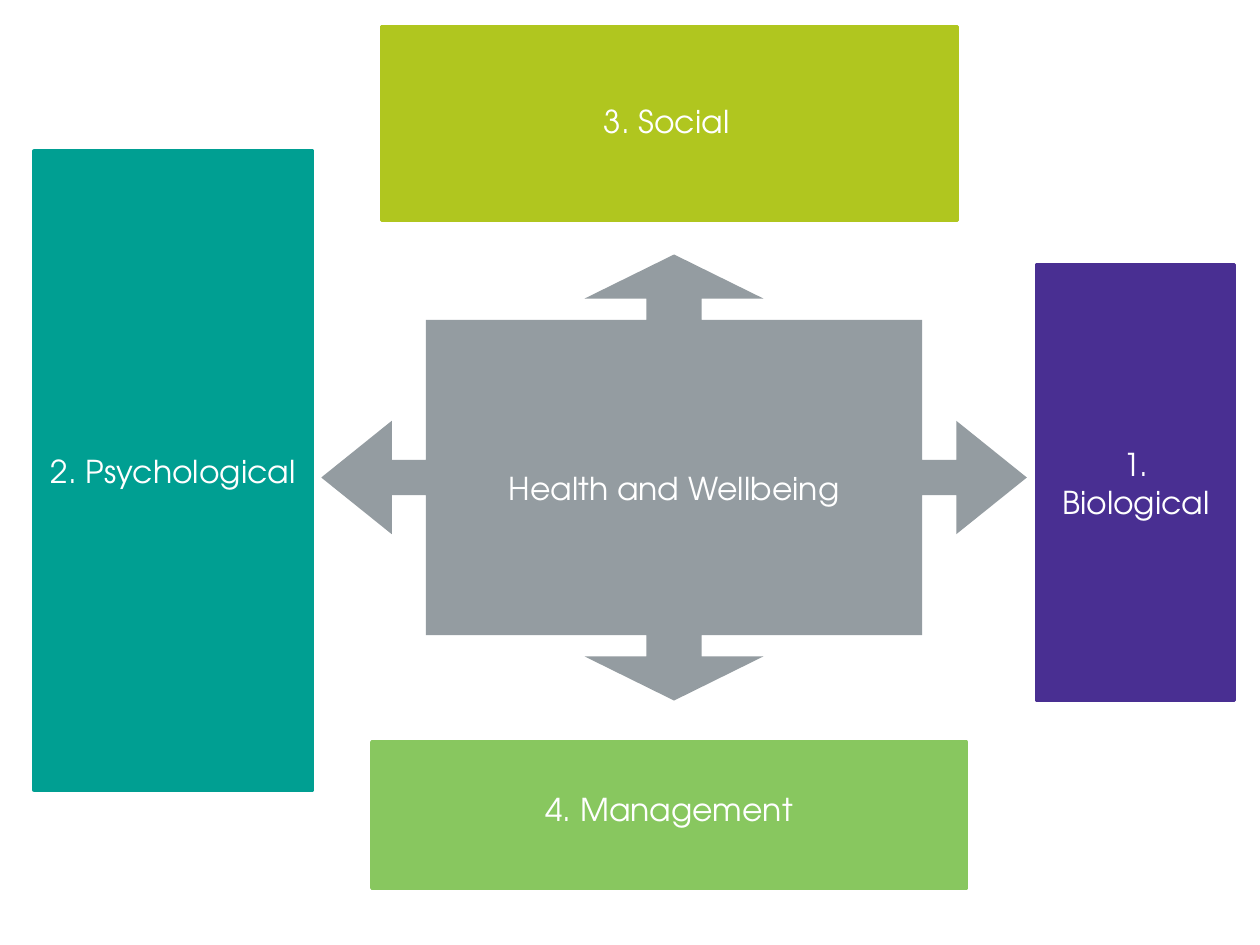
from pptx import Presentation
from pptx.dml.color import RGBColor
from pptx.enum.shapes import MSO_SHAPE
from pptx.enum.text import MSO_ANCHOR, PP_ALIGN
from pptx.util import Inches, Pt

FONT = "TeX Gyre Adventor"
WHITE = RGBColor(0xFF, 0xFF, 0xFF)
TEAL = RGBColor(0x00, 0x9F, 0x92)
PURPLE = RGBColor(0x49, 0x2F, 0x92)
LIME = RGBColor(0xB0, 0xC6, 0x1F)
GREEN = RGBColor(0x88, 0xC7, 0x5F)
GREY = RGBColor(0x94, 0x9C, 0xA1)

HUB_CENTRE = (5.35, 3.79)
# Offsets from the hub's centre, from the top arrow tip to the right one
HUB_QUARTER = [
    (0, -1.77), (0.71, -1.42), (0.22, -1.42), (0.22, -1.25), (1.97, -1.25),
    (1.97, -0.14), (2.24, -0.14), (2.24, -0.45), (2.8, 0),
]


def write_label(shape, label, anchor=MSO_ANCHOR.MIDDLE, top=0.05, bottom=0.05):
    frame = shape.text_frame
    frame.text = label
    frame.word_wrap = True
    frame.vertical_anchor = anchor
    frame.margin_top, frame.margin_bottom = Inches(top), Inches(bottom)
    paragraph = frame.paragraphs[0]
    paragraph.alignment = PP_ALIGN.CENTER
    font = paragraph.runs[0].font
    font.name, font.size = FONT, Pt(18)
    font.color.rgb = WHITE


def add_factor(slide, box, color):
    """Add the coloured rectangle of one factor around the hub."""
    factor = slide.shapes.add_shape(MSO_SHAPE.RECTANGLE, *map(Inches, box))
    factor.shadow.inherit = False
    factor.fill.solid()
    factor.fill.fore_color.rgb = color
    factor.line.color.rgb = color
    factor.line.width = Pt(2)
    return factor


def add_hub(slide):
    """Add the central block with four arrows, mirrored from one quarter."""
    right = HUB_QUARTER + [(x, -y) for x, y in reversed(HUB_QUARTER[:-1])]
    outline = right + [(-x, y) for x, y in reversed(right[1:-1])]
    centre_x, centre_y = HUB_CENTRE
    points = [(Inches(centre_x + x), Inches(centre_y + y)) for x, y in outline]
    builder = slide.shapes.build_freeform(*points[0])
    builder.add_line_segments(points[1:], close=True)
    hub = builder.convert_to_shape()
    hub.shadow.inherit = False
    hub.fill.solid()
    hub.fill.fore_color.rgb = GREY
    hub.line.fill.background()
    return hub


def main():
    presentation = Presentation()
    presentation.slide_width = Inches(10)
    presentation.slide_height = Inches(7.5)
    slide = presentation.slides.add_slide(presentation.slide_layouts[6])

    psychological = add_factor(slide, (0.27, 1.2, 2.21, 5.07), TEAL)
    write_label(psychological, "2. Psychological")
    biological = add_factor(slide, (8.23, 2.1, 1.57, 3.46), PURPLE)
    write_label(biological, "1. Biological")
    add_factor(slide, (3.03, 0.21, 4.57, 1.54), LIME)
    management = add_factor(slide, (2.95, 5.89, 4.72, 1.16), GREEN)
    write_label(management, "4. Management", bottom=0.15)

    write_label(add_hub(slide), "Health and Wellbeing", top=0.22)

    social = slide.shapes.add_textbox(*map(Inches, (3.14, 0.76, 4.3, 0.4)))
    write_label(social, "3. Social", anchor=MSO_ANCHOR.TOP)

    presentation.save("out.pptx")


if __name__ == "__main__":
    main()
